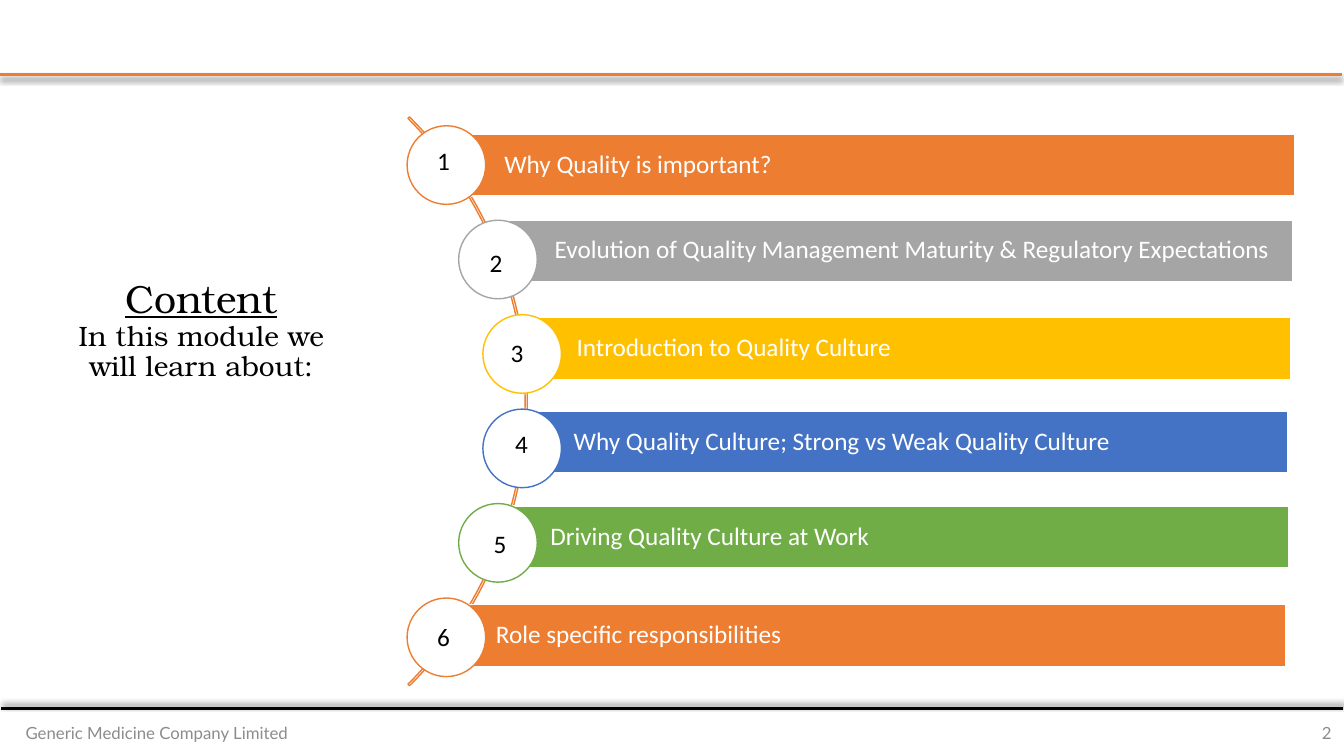
from lxml import etree
from pptx import Presentation
from pptx.dml.color import RGBColor
from pptx.enum.shapes import MSO_CONNECTOR, MSO_SHAPE
from pptx.enum.text import MSO_ANCHOR, PP_ALIGN
from pptx.oxml.ns import qn
from pptx.util import Cm, Pt

LEFT, CENTER, RIGHT = PP_ALIGN.LEFT, PP_ALIGN.CENTER, PP_ALIGN.RIGHT
TOP, MIDDLE = MSO_ANCHOR.TOP, MSO_ANCHOR.MIDDLE
STRAIGHT = MSO_CONNECTOR.STRAIGHT
RECTANGLE, OVAL, BLOCK_ARC = MSO_SHAPE.RECTANGLE, MSO_SHAPE.OVAL, MSO_SHAPE.BLOCK_ARC

WHITE = RGBColor(0xFF, 0xFF, 0xFF)
BLACK = RGBColor(0x00, 0x00, 0x00)
FOOTER_GRAY = RGBColor(0x8C, 0x8C, 0x8C)
ORANGE = RGBColor(0xED, 0x7D, 0x31)
GRAY = RGBColor(0xA5, 0xA5, 0xA5)
YELLOW = RGBColor(0xFF, 0xC0, 0x00)
BLUE = RGBColor(0x44, 0x72, 0xC4)
GREEN = RGBColor(0x70, 0xAD, 0x47)

HEADING = {"name": "TeX Gyre Bonum", "size": Pt(28), "underline": True}
SUBHEADING = {"name": "TeX Gyre Bonum", "size": Pt(20), "underline": False}
BODY = {"name": "Calibri", "size": Pt(18)}
FOOTER = {"name": "Lato", "size": Pt(12)}

# Topic, colour, bar (left, top), number box (left, top, width), in cm
TOPICS = [
    ("Why Quality is important?", ORANGE, (11.46, 3.38), (10.77, 3.53, 0.76)),
    ("Evolution of Quality Management Maturity & Regulatory Expectations",
     GRAY, (12.73, 5.54), (12.09, 6.1, 0.76)),
    ("Introduction to Quality Culture", YELLOW, (13.28, 8), (12.62, 8.38, 1.37)),
    ("Why Quality Culture; Strong vs Weak Quality Culture",
     BLUE, (13.21, 10.36), (12.73, 10.67, 0.76)),
    ("Driving Quality Culture at Work", GREEN, (12.62, 12.75), (12.19, 13.18, 1.83)),
    ("Role specific responsibilities", ORANGE, (11.25, 15.24), (10.77, 15.52, 0.76)),
]
# Bar width and circle left by distance from the nearer end of the arc
BAR_WIDTHS = (21.16, 19.86, 19.25)
CIRCLE_LEFTS = (10.26, 11.56, 12.17)
BAR_HEIGHT = 1.56
CIRCLE_SIZE, CIRCLE_TOP, CIRCLE_STEP = 1.98, 3.17, 2.38


def style_font(font, style, color):
    for attribute, value in style.items():
        setattr(font, attribute, value)
    font.color.rgb = color


def add_rule(slide, left, top, color, shadow_angle):
    rule = slide.shapes.add_connector(
        STRAIGHT, Cm(left), Cm(top), Cm(left + 33.81), Cm(top))
    rule.line.color.rgb = color
    rule.line.width = Pt(2.25)
    effects = etree.SubElement(rule._element.spPr, qn("a:effectLst"))
    shadow = etree.SubElement(
        effects, qn("a:outerShdw"), blurRad=str(Pt(4)), dist=str(Pt(3)),
        dir=str(shadow_angle * 60000), algn="t", rotWithShape="0")
    shadow_color = etree.SubElement(shadow, qn("a:srgbClr"), val="000000")
    etree.SubElement(shadow_color, qn("a:alpha"), val="40000")


def add_outlined(slide, kind, box, line_color, fill_color=None):
    shape = slide.shapes.add_shape(kind, *map(Cm, box))
    shape.shadow.inherit = False
    if fill_color is None:
        shape.fill.background()
    else:
        shape.fill.solid()
        shape.fill.fore_color.rgb = fill_color
    shape.line.color.rgb = line_color
    shape.line.width = Pt(1)
    return shape


def write_line(shape, text, style, color, align=LEFT, anchor=MIDDLE):
    frame = shape.text_frame
    frame.word_wrap = True
    frame.vertical_anchor = anchor
    paragraph = frame.paragraphs[0]
    paragraph.alignment = align
    run = paragraph.add_run()
    run.text = text
    style_font(run.font, style, color)
    return paragraph


def add_label(slide, box, text, style, color, align=LEFT, anchor=MIDDLE):
    label = slide.shapes.add_textbox(*map(Cm, box))
    return write_line(label, text, style, color, align, anchor)


def add_bar(slide, box, topic, color):
    bar = add_outlined(slide, RECTANGLE, box, WHITE, color)
    bar.text_frame.margin_left = Cm(1.25)
    for side in ("right", "top", "bottom"):
        setattr(bar.text_frame, f"margin_{side}", Cm(0.13))
    write_line(bar, topic, BODY, WHITE).line_spacing = 0.9


def add_title(slide):
    title = add_label(slide, (1.57, 6.6, 7.01, 3.48), "Content", HEADING, BLACK, CENTER)
    title.line_spacing = 0.9
    title.add_line_break()
    subtitle = title.add_run()
    subtitle.text = "In this module we will learn about:"
    style_font(subtitle.font, SUBHEADING, BLACK)


def add_arc(slide):
    arc = add_outlined(slide, BLOCK_ARC, (-6.98, -0.02, 20.27, 20.27), ORANGE)
    for index, value in enumerate((189, 27, 0.0027)):
        arc.adjustments[index] = value


def main():
    prs = Presentation()
    prs.slide_width, prs.slide_height = Cm(33.87), Cm(19.05)
    slide = prs.slides.add_slide(prs.slide_layouts[6])

    # Header and footer
    add_rule(slide, 0, 1.88, ORANGE, 90)
    add_rule(slide, 0.03, 17.86, BLACK, 270)
    add_label(slide, (0.03, 17.96, 7.85, 1.02),
              "Generic Medicine Company Limited", FOOTER, FOOTER_GRAY, CENTER)
    add_label(slide, (26.19, 17.96, 7.62, 1.02), "2", FOOTER, FOOTER_GRAY, RIGHT)

    # Title
    add_title(slide)

    # Topics along the arc
    add_arc(slide)
    for index, (topic, color, bar_corner, number_box) in enumerate(TOPICS):
        level = min(index, len(TOPICS) - 1 - index)
        add_bar(slide, (*bar_corner, BAR_WIDTHS[level], BAR_HEIGHT), topic, color)
        circle_top = CIRCLE_TOP + index * CIRCLE_STEP
        add_outlined(slide, OVAL, (CIRCLE_LEFTS[level], circle_top,
                                   CIRCLE_SIZE, CIRCLE_SIZE), color, WHITE)
        add_label(slide, (*number_box, 1.03), str(index + 1), BODY, BLACK, anchor=TOP)

    prs.save("out.pptx")


if __name__ == "__main__":
    main()
